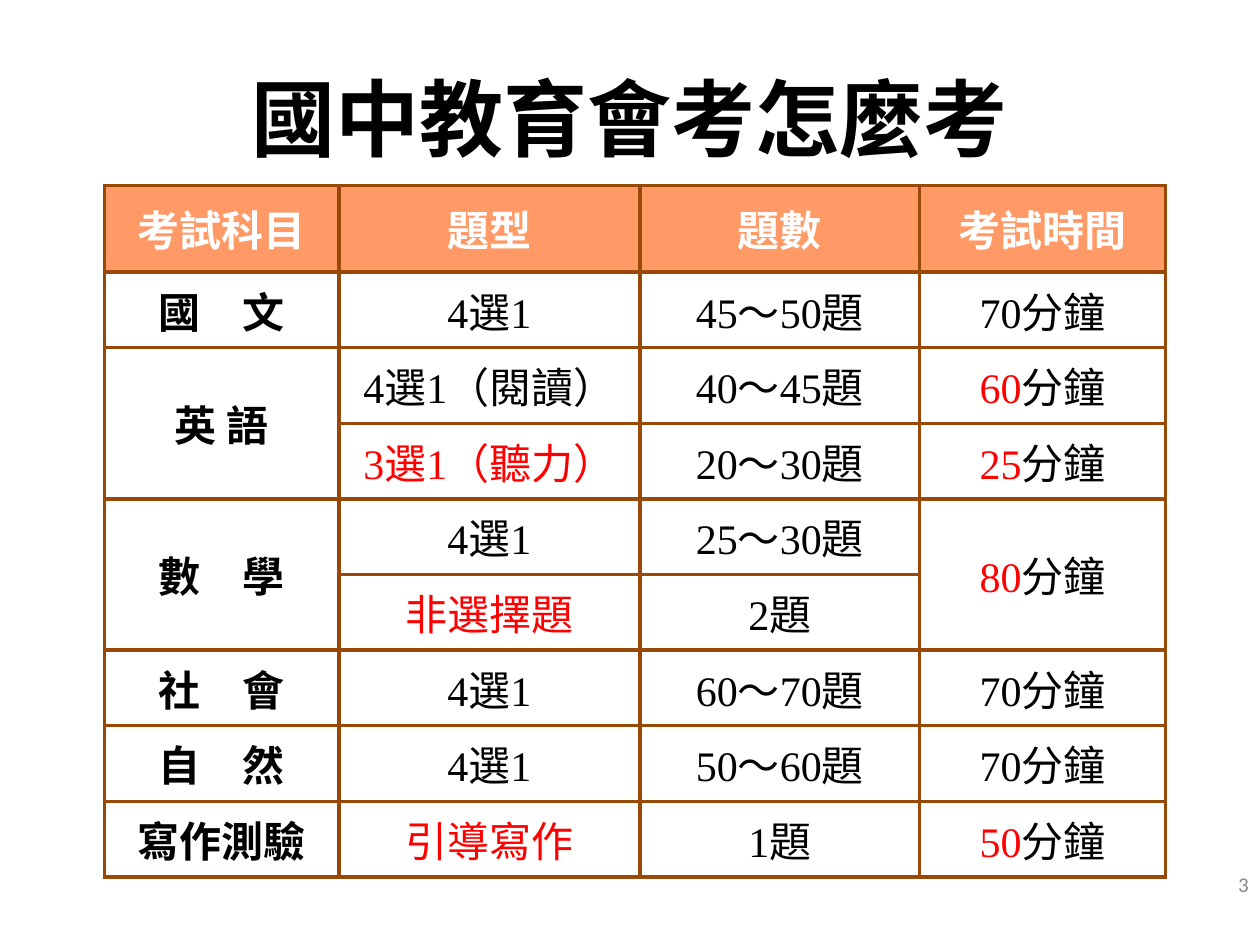
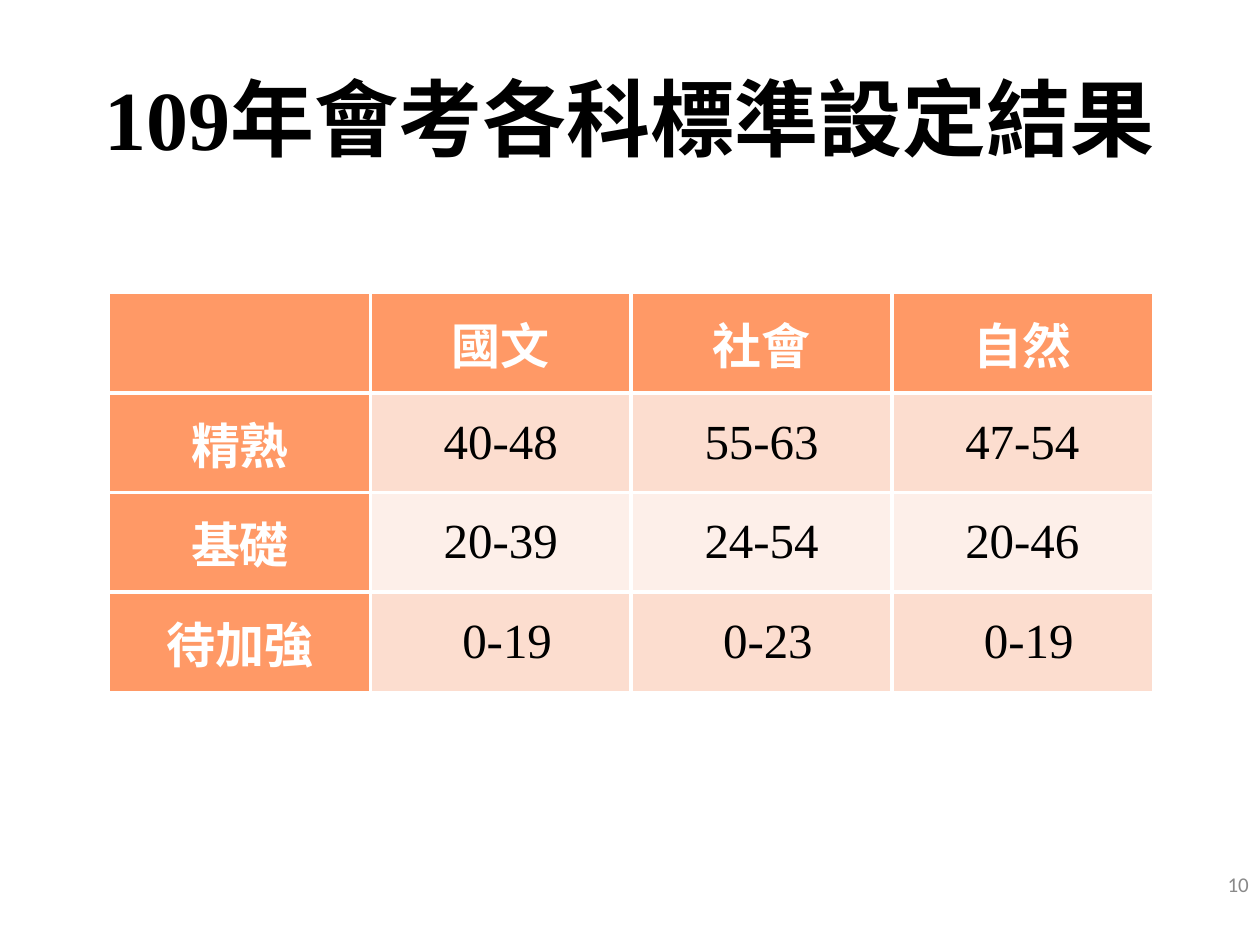
from lxml import etree
from pptx import Presentation
from pptx.dml.color import RGBColor
from pptx.enum.text import MSO_ANCHOR, PP_ALIGN
from pptx.oxml.ns import qn
from pptx.util import Inches, Pt

COLORS = {
    "text": "000000", "white": "FFFFFF", "red": "FF0000", "gray": "898989",
    "orange": "FF9966", "brown": "984807", "band": "FCDDCF", "light band": "FDEFE9",
}
CJK_FONT = "Noto Sans CJK SC"
LATIN_FONT = "Times New Roman"
TITLE = {"size": Pt(48), "name": LATIN_FONT, "bold": True}
NUMBER = {"size": Pt(12), "name": "Calibri", "bold": False}

# Text before a bar is red.
EXAM_ROWS = [
    ["考試科目", "題型", "題數", "考試時間"],
    ["國　文", "4選1", "45～50題", "70分鐘"],
    ["英 語", "4選1（閱讀）", "40～45題", "60|分鐘"],
    ["", "3選1（聽力）|", "20～30題", "25|分鐘"],
    ["數　學", "4選1", "25～30題", "80|分鐘"],
    ["", "非選擇題|", "2題", ""],
    ["社　會", "4選1", "60～70題", "70分鐘"],
    ["自　然", "4選1", "50～60題", "70分鐘"],
    ["寫作測驗", "引導寫作|", "1題", "50|分鐘"],
]
EXAM_MERGES = [(2, 0), (4, 0), (4, 3)]
LEVEL_ROWS = [
    ["", "國文", "社會", "自然"],
    ["精熟", "40-48", "55-63", "47-54"],
    ["基礎", "20-39", "24-54", "20-46"],
    ["待加強", "0-19", "0-23", "0-19"],
]


class Deck:
    def __init__(self):
        self.file = Presentation()
        self.file.slide_width, self.file.slide_height = Inches(10), Inches(7.5)
        self.page = None

    def add_page(self, title, number):
        self.page = self.file.slides.add_slide(self.file.slide_layouts[6])
        self.add_text(title, (0.5, 0.3, 9, 1.25), TITLE, "text", PP_ALIGN.CENTER)
        self.add_text(number, (7.68, 6.82, 2.33, 0.4), NUMBER, "gray", PP_ALIGN.RIGHT)

    def add_text(self, text, place, style, color, align):
        box = self.page.shapes.add_textbox(*map(Inches, place))
        frame = box.text_frame
        frame.word_wrap = True
        frame.vertical_anchor = MSO_ANCHOR.MIDDLE
        self.fill_frame(frame, text, style, color, align)

    def fill_frame(self, frame, text, style, color, align=PP_ALIGN.CENTER):
        """Fill a text frame, with the part before a bar in red."""
        para = frame.paragraphs[0]
        para.alignment = align
        red, _, rest = text.rpartition("|")
        for part, part_color in ((red, "red"), (rest, color)):
            if not part:
                continue
            span = para.add_run()
            span.text = part
            for name, value in style.items():
                setattr(span.font, name, value)
            span.font.color.rgb = RGBColor.from_string(COLORS[part_color])
            etree.SubElement(span.font._element, qn("a:ea"), typeface=CJK_FONT)

    def add_table(self, place, widths, heights):
        shape = self.page.shapes.add_table(
            len(heights), len(widths), *map(Inches, place))
        table = shape.table
        table.first_row = table.horz_banding = False
        for column, width in zip(table.columns, widths):
            column.width = Inches(width)
        for row, height in zip(table.rows, heights):
            row.height = Inches(height)
        return table

    def fill_cell(self, cell, text, style, color, fill, margins):
        cell.vertical_anchor = MSO_ANCHOR.MIDDLE
        for side, margin in zip(("left", "top", "right", "bottom"), margins):
            setattr(cell, f"margin_{side}", Inches(margin))
        if fill:
            cell.fill.solid()
            cell.fill.fore_color.rgb = RGBColor.from_string(COLORS[fill])
        else:
            cell.fill.background()
        self.fill_frame(cell.text_frame, text, style, color)

    def add_borders(self, cell, color, left, right, top, bottom):
        """Draw the four cell edges, each with its width in points."""
        properties = cell._tc.get_or_add_tcPr()
        for side, width in zip("LRTB", (left, right, top, bottom)):
            line = etree.SubElement(properties, qn(f"a:ln{side}"), w=str(Pt(width)))
            solid = etree.SubElement(line, qn("a:solidFill"))
            etree.SubElement(solid, qn("a:srgbClr"), val=COLORS[color])


def add_exam_page(deck):
    deck.add_page("國中教育會考怎麼考", "3")
    table = deck.add_table((0.83, 1.47, 8.43, 5.51), [1.86, 2.39, 2.22, 1.95],
                           [0.69] + [0.6] * 8)
    for row, texts in enumerate(EXAM_ROWS):
        for column, text in enumerate(texts):
            header = row == 0
            style = {"size": Pt(24), "name": LATIN_FONT, "bold": header or column == 0}
            cell = table.cell(row, column)
            deck.add_borders(cell, "brown", *[2.25] * 4)
            deck.fill_cell(cell, text, style, "white" if header else "text",
                           "orange" if header else None, [0.02] * 4)
    for row, column in EXAM_MERGES:
        table.cell(row, column).merge(table.cell(row + 1, column))


def add_level_page(deck):
    deck.add_page("109年會考各科標準設定結果", "10")
    table = deck.add_table((0.87, 2.33, 8.27, 3.15), [2.07] * 4, [0.79] * 4)
    edges = [1, 2.25, 2.25, 2.25, 1]
    row_edges = [1, 3, 2.25, 2.25, 1]
    for row, texts in enumerate(LEVEL_ROWS):
        for column, text in enumerate(texts):
            label = row == 0 or column == 0
            style = {"size": Pt(28), "name": "Arial" if label else LATIN_FONT,
                     "bold": label}
            fill = "orange" if label else "band" if row % 2 else "light band"
            margins = (0.1, 0.05, 0.1, 0.05) if row == 0 else (0.02, 0, 0.02, 0)
            if row == 3 and not label:
                margins = (0.2, 0.05, 0.1, 0.05)
            cell = table.cell(row, column)
            deck.add_borders(cell, "white", *edges[column:column + 2],
                             *row_edges[row:row + 2])
            deck.fill_cell(cell, text, style, "white" if label else "text",
                           fill, margins)


def main():
    deck = Deck()
    add_exam_page(deck)
    add_level_page(deck)
    deck.file.save("out.pptx")


if __name__ == "__main__":
    main()
